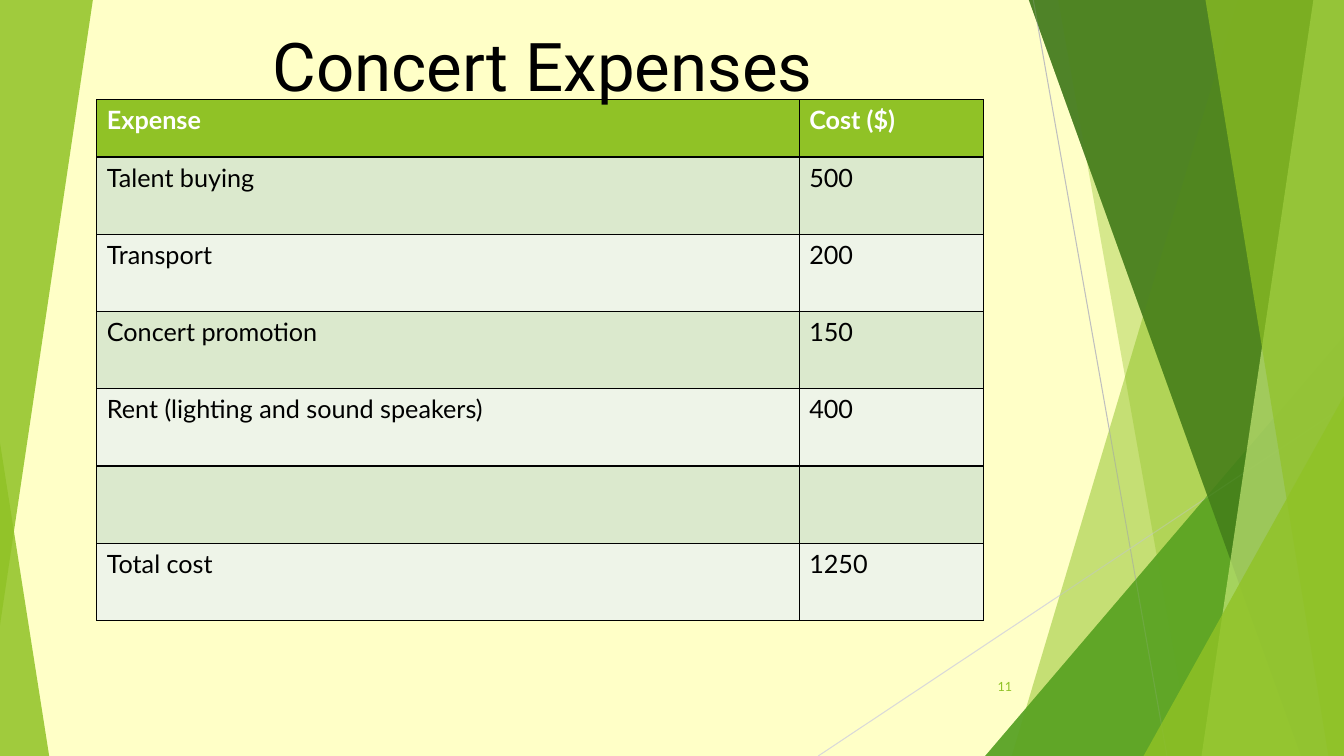
from dataclasses import dataclass

from lxml import etree
from pptx import Presentation
from pptx.dml.color import RGBColor
from pptx.enum.shapes import MSO_CONNECTOR, MSO_SHAPE
from pptx.enum.text import MSO_ANCHOR, MSO_AUTO_SIZE, PP_ALIGN
from pptx.oxml.ns import qn
from pptx.util import Cm, Pt

TRIANGLE = MSO_SHAPE.ISOSCELES_TRIANGLE
STRAIGHT = MSO_CONNECTOR.STRAIGHT
TOP, MIDDLE = MSO_ANCHOR.TOP, MSO_ANCHOR.MIDDLE
CENTER, RIGHT = PP_ALIGN.CENTER, PP_ALIGN.RIGHT
GROW, FIXED = MSO_AUTO_SIZE.SHAPE_TO_FIT_TEXT, MSO_AUTO_SIZE.NONE

SLIDE_WIDTH, SLIDE_HEIGHT = 33.87, 19.05


@dataclass(frozen=True)
class Theme:
    background: str = "FFFFC7"
    lime: str = "90C226"
    green: str = "54A021"
    forest: str = "3F7819"
    pale_lime: str = "C0E474"
    row_dark: str = "DBE9CD"
    row_light: str = "EEF4E8"
    black: str = "000000"
    white: str = "FFFFFF"
    gray: str = "BFBFBF"
    light_gray: str = "D9D9D9"
    title_font: str = "Roboto"
    body_font: str = "Lato"
    title_size: int = 48
    body_size: int = 18
    number_size: int = 9


THEME = Theme()

EXPENSES = [
    ("Expense", "Cost ($)"),
    ("Talent buying", "500"),
    ("Transport", "200"),
    ("Concert promotion", "150"),
    ("Rent (lighting and sound speakers)", "400"),
    ("", ""),
    ("Total cost", "1250"),
]

# Bands run top to bottom: distance from the right edge at top and bottom, colour, opacity
BACK_BANDS = [(2.68, 8.37, THEME.lime, 30), (7.2, 3.82, THEME.lime, 20)]
FRONT_BANDS = [
    (7.94, 1.08, THEME.forest, 70),
    (0.77, 3.59, THEME.pale_lime, 70),
    (3.49, 0.39, THEME.lime, 65),
]


def set_values(target, values):
    for name, value in values.items():
        setattr(target, name, value)


def write_text(frame, text, size, color, font, bold=False, align=None):
    para = frame.paragraphs[0]
    para.alignment = align
    span = para.add_run()
    span.text = text
    set_values(span.font, {"size": Pt(size), "name": font, "bold": bold})
    span.font.color.rgb = RGBColor.from_string(color)


def add_text_box(page, box, anchor, auto_size, **text_format):
    frame = page.shapes.add_textbox(*map(Cm, box)).text_frame
    set_values(frame, {"word_wrap": True, "vertical_anchor": anchor, "auto_size": auto_size})
    write_text(frame, **text_format)


def paint(shape, color, opacity):
    shape.shadow.inherit = False
    shape.line.fill.background()
    shape.fill.solid()
    shape.fill.fore_color.rgb = RGBColor.from_string(color)
    tint = shape.element.spPr.find(".//" + qn("a:srgbClr"))
    etree.SubElement(tint, qn("a:alpha"), val=str(opacity * 1000))


def add_band(page, box, top_inset, bottom_inset, color, opacity):
    left, top, width, height = box
    right, bottom = left + width, top + height
    corners = [(right - top_inset, top), (right, top), (right, bottom), (right - bottom_inset, bottom)]
    points = [(Cm(x), Cm(y)) for x, y in corners]
    builder = page.shapes.build_freeform(*points[0])
    builder.add_line_segments(points[1:])
    paint(builder.convert_to_shape(), color, opacity)


def add_triangle(page, box, apex, color, opacity, rotation=0):
    shape = page.shapes.add_shape(TRIANGLE, *map(Cm, box))
    shape.adjustments[0] = apex
    shape.rotation = rotation
    paint(shape, color, opacity)


def add_corner(page, box, width, height, color, opacity):
    left, top, box_width, box_height = box
    place = (left + box_width - width, top + box_height - height, width, height)
    add_triangle(page, place, 1, color, opacity)


def add_right_facets(page, box):
    for band in BACK_BANDS:
        add_band(page, box, *band)
    add_corner(page, box, 9.04, 10.59, THEME.green, 72)
    for band in FRONT_BANDS:
        add_band(page, box, *band)
    add_corner(page, box, 5.05, 9.07, THEME.lime, 80)


def add_hairlines(page, box):
    left, top, width, height = box
    right = left + width
    for start_inset, start_y, end_inset, color in [
        (7.83, 0, 4.46, THEME.gray),
        (0, 10.24, 13.25, THEME.light_gray),
    ]:
        ends = (right - start_inset, top + start_y, right - end_inset, top + height)
        line = page.shapes.add_connector(STRAIGHT, *map(Cm, ends))
        line.line.width = Pt(0.75)
        line.line.color.rgb = RGBColor.from_string(color)
        etree.SubElement(line.element.spPr, qn("a:effectLst"))


def add_backdrop(page, box):
    left, top, width, height = box
    page.background.fill.solid()
    page.background.fill.fore_color.rgb = RGBColor.from_string(THEME.background)
    # The right facets lie in two layers with the hairlines between them
    add_right_facets(page, box)
    add_triangle(page, (left, top + height - 7.9, 1.24, 7.9), 0, THEME.lime, 85)
    add_hairlines(page, box)
    add_right_facets(page, box)
    add_triangle(page, (left, top, 2.34, 15.75), 1, THEME.lime, 85, 180)


def add_borders(cell, widths):
    properties = cell._tc.get_or_add_tcPr()
    for index, (side, width) in enumerate(widths.items()):
        edge = etree.Element(qn("a:ln" + side), w=str(Pt(width)))
        fill = etree.SubElement(edge, qn("a:solidFill"))
        etree.SubElement(fill, qn("a:srgbClr"), val=THEME.black)
        properties.insert(index, edge)


def add_expense_table(page, box):
    left, top, width, height = box
    header_height, cost_width = 1.45, 4.65
    row_height = (height - header_height) / (len(EXPENSES) - 1)
    table = page.shapes.add_table(len(EXPENSES), 2, *map(Cm, box)).table
    table.columns[0].width = Cm(width - cost_width)
    table.columns[1].width = Cm(cost_width)
    for row, entries in enumerate(EXPENSES):
        header = row == 0
        table.rows[row].height = Cm(header_height if header else row_height)
        shade = THEME.lime if header else (THEME.row_light, THEME.row_dark)[row % 2]
        color = THEME.white if header else THEME.black
        # A heavier rule parts the header from the body
        widths = {"L": 1, "R": 1, "T": 1.5 if row == 1 else 1, "B": 1.5 if header else 1}
        for column, text in enumerate(entries):
            cell = table.cell(row, column)
            cell.fill.solid()
            cell.fill.fore_color.rgb = RGBColor.from_string(shade)
            add_borders(cell, widths)
            if text:
                write_text(cell.text_frame, text, THEME.body_size, color, THEME.body_font, header)


def add_expense_slide(deck, box):
    left, top = box[:2]
    page = deck.slides.add_slide(deck.slide_layouts[6])
    add_backdrop(page, box)
    # Page number
    add_text_box(page, (left + 23.85, top + 16.79, 1.91, 1.02), MIDDLE, FIXED, text="11",
                 size=THEME.number_size, color=THEME.lime, font=THEME.body_font, align=RIGHT)
    add_expense_table(page, (left + 2.44, top + 2.51, 22.35, 13.13))
    # Title
    add_text_box(page, (left + 6.43, top + 0.5, 14.5, 1.63), TOP, GROW, text="Concert Expenses",
                 size=THEME.title_size, color=THEME.black, font=THEME.title_font, align=CENTER)


def main():
    deck = Presentation()
    set_values(deck, {"slide_width": Cm(SLIDE_WIDTH), "slide_height": Cm(SLIDE_HEIGHT)})
    add_expense_slide(deck, (0, 0, SLIDE_WIDTH, SLIDE_HEIGHT))
    deck.save("out.pptx")


if __name__ == "__main__":
    main()
